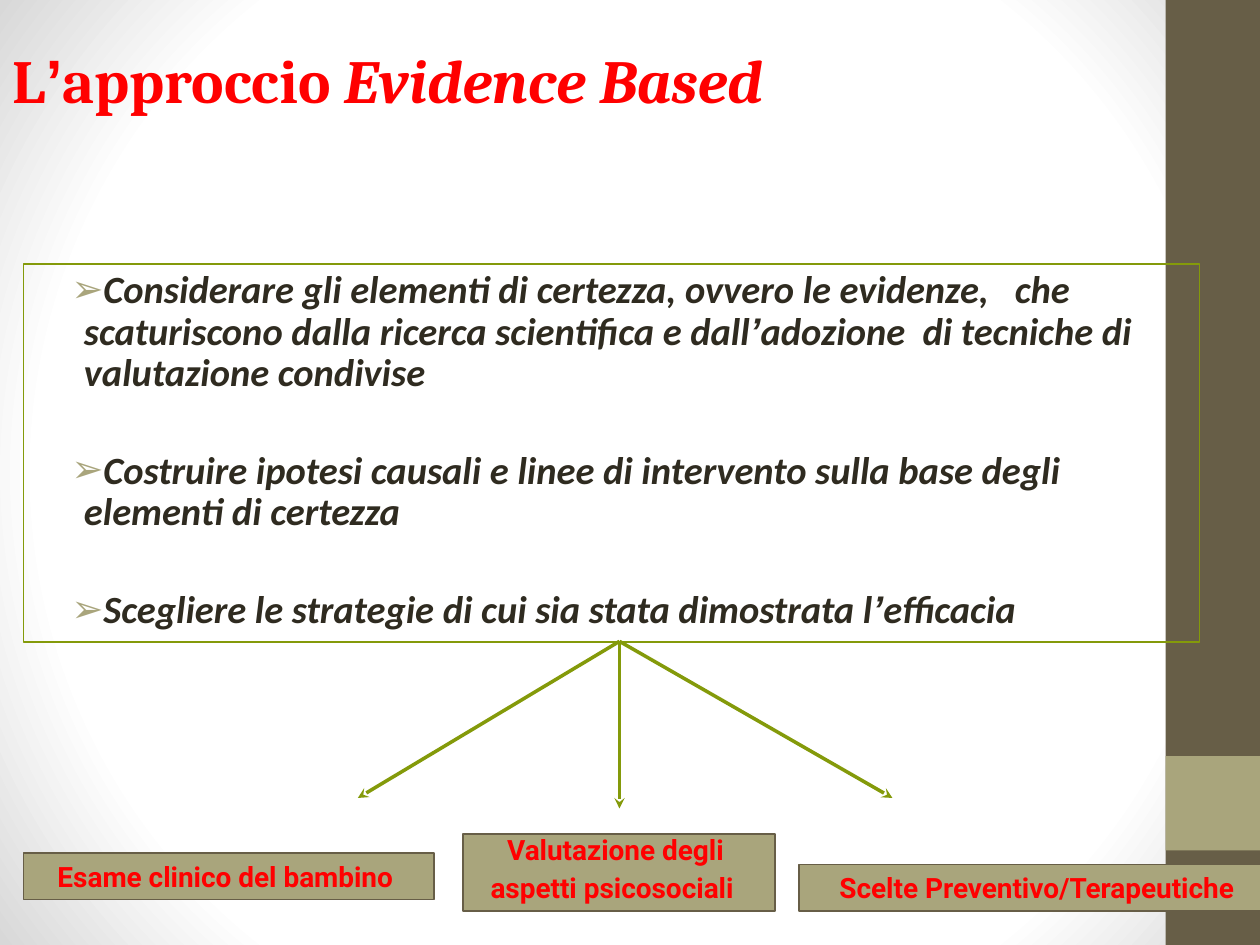
import pptx
import pptx.dml.color
import pptx.enum.shapes
import pptx.enum.text
import pptx.oxml
import pptx.oxml.ns
import pptx.util
import lxml.etree

Pt = pptx.util.Pt
ALIGN = pptx.enum.text.PP_ALIGN
ANCHOR = pptx.enum.text.MSO_ANCHOR
RED, OLIVE, SAND, BROWN, INK = "FF0000", "849A0A", "A9A57C", "675E47", "2F2B20"
NS = pptx.oxml.ns.nsdecls("a")


def color(target, value):
    target.rgb = pptx.dml.color.RGBColor.from_string(value)


def add_box(left, top, width, height, fill=None, line=None):
    box = slide.shapes.add_shape(
        pptx.enum.shapes.MSO_SHAPE.RECTANGLE, Pt(left), Pt(top), Pt(width), Pt(height))
    box.shadow.inherit = False
    for part, value in ((box.fill, fill), (box.line.fill, line)):
        if value:
            part.solid()
            color(part.fore_color, value)
        else:
            part.background()
    if line:
        box.line.width = Pt(1)
    return box


deck = pptx.Presentation()
deck.slide_width, deck.slide_height = Pt(720), Pt(540)
slide = deck.slides.add_slide(deck.slide_layouts[6])

# Background: white, shading to grey towards the rim
background = slide.background.fill
background.gradient()
gradient = slide.background._cSld.find(".//" + pptx.oxml.ns.qn("a:gradFill"))
stops = "".join(f'<a:gs pos="{position}"><a:srgbClr val="{value}"/></a:gs>'
                for position, value in ((0, "FFFFFF"), (75000, "FFFFFF"), (100000, "D8D8D8")))
gradient.getparent().replace(gradient, pptx.oxml.parse_xml(
    f'<a:gradFill {NS} rotWithShape="1"><a:gsLst>{stops}</a:gsLst>'
    '<a:path path="circle"><a:fillToRect l="0" t="0" r="0" b="0"/></a:path></a:gradFill>'))

# Side band
add_box(666, 0, 54, 540, BROWN)
add_box(666, 432, 54, 54, SAND)

# Title
title = slide.shapes.add_textbox(0, 0, Pt(702), Pt(90)).text_frame
title.word_wrap = True
title.vertical_anchor = ANCHOR.MIDDLE
for text, font, italic in (("L", "Cambria", False), ("’", "Arial", False),
                           ("approccio ", "Cambria", False),
                           ("Evidence Based", "Cambria", True)):
    run = title.paragraphs[0].add_run()
    run.text = text
    run.font.name, run.font.size = font, Pt(35)
    run.font.bold, run.font.italic = True, italic
    color(run.font.color, RED)

# Principles
principles = [
    ["Considerare gli elementi di certezza, ovvero le evidenze,   che "
     "scaturiscono dalla ricerca scientifica e dall", "’",
     "adozione  di tecniche di valutazione condivise"],
    ["Costruire ipotesi causali e linee di intervento sulla base degli elementi di certezza"],
    ["Scegliere le strategie di cui sia stata dimostrata l", "’", "efficacia"],
]
body = add_box(13.5, 151, 672, 216, line=OLIVE).text_frame
body.word_wrap = True
body.vertical_anchor = ANCHOR.TOP
for index, parts in enumerate(principles):
    paragraph = body.paragraphs[0] if index == 0 else body.add_paragraph()
    paragraph.alignment = ALIGN.LEFT
    paragraph.line_spacing = 0.9
    paragraph.space_before = Pt(32 if index else 4.4)
    properties = paragraph._p.get_or_add_pPr()
    properties.set("marL", str(Pt(27.4)))
    properties.set("indent", str(-Pt(7.2)))
    for bullet in (f'<a:buClr {NS}><a:srgbClr val="{SAND}"/></a:buClr>',
                   f'<a:buFont {NS} typeface="Arial"/>',
                   f'<a:buChar {NS} char="➢"/>'):
        properties.append(pptx.oxml.parse_xml(bullet))
    for text in parts:
        run = paragraph.add_run()
        run.text = text
        run.font.name = "Arial" if text == "’" else "Calibri"
        run.font.size = Pt(22)
        run.font.bold = run.font.italic = True
        color(run.font.color, INK)

# Outcomes
outcomes = [
    (13.5, 487.5, 234.5, 26.5, ["Esame clinico del bambino "]),
    (264.5, 476.5, 178.5, 44, ["Valutazione degli ", "aspetti psicosociali  "]),
    (456.5, 494, 272, 26.5, ["Scelte Preventivo/Terapeutiche"]),
]
for left, top, width, height, lines in outcomes:
    frame = add_box(left, top, width, height, SAND, BROWN).text_frame
    frame.word_wrap = False
    frame.vertical_anchor = ANCHOR.MIDDLE
    for index, text in enumerate(lines):
        paragraph = frame.paragraphs[0] if index == 0 else frame.add_paragraph()
        paragraph.alignment = ALIGN.CENTER
        if len(lines) > 1:
            paragraph.line_spacing = 0.7
        if index:
            paragraph.space_before = Pt(8)
        run = paragraph.add_run()
        run.text = text
        run.font.name, run.font.size, run.font.bold = "Roboto", Pt(16), True
        color(run.font.color, RED)

# Arrows from the principles to the outcomes
for end_x, end_y in ((204.5, 456), (354, 462), (510, 456)):
    arrow = slide.shapes.add_connector(
        pptx.enum.shapes.MSO_CONNECTOR.STRAIGHT, Pt(354), Pt(366.5), Pt(end_x), Pt(end_y))
    arrow.line.width = Pt(2)
    color(arrow.line.color, OLIVE)
    lxml.etree.SubElement(arrow.line._get_or_add_ln(), pptx.oxml.ns.qn("a:tailEnd"), type="stealth")
    lxml.etree.SubElement(arrow._element.spPr, pptx.oxml.ns.qn("a:effectLst"))

deck.save("out.pptx")
